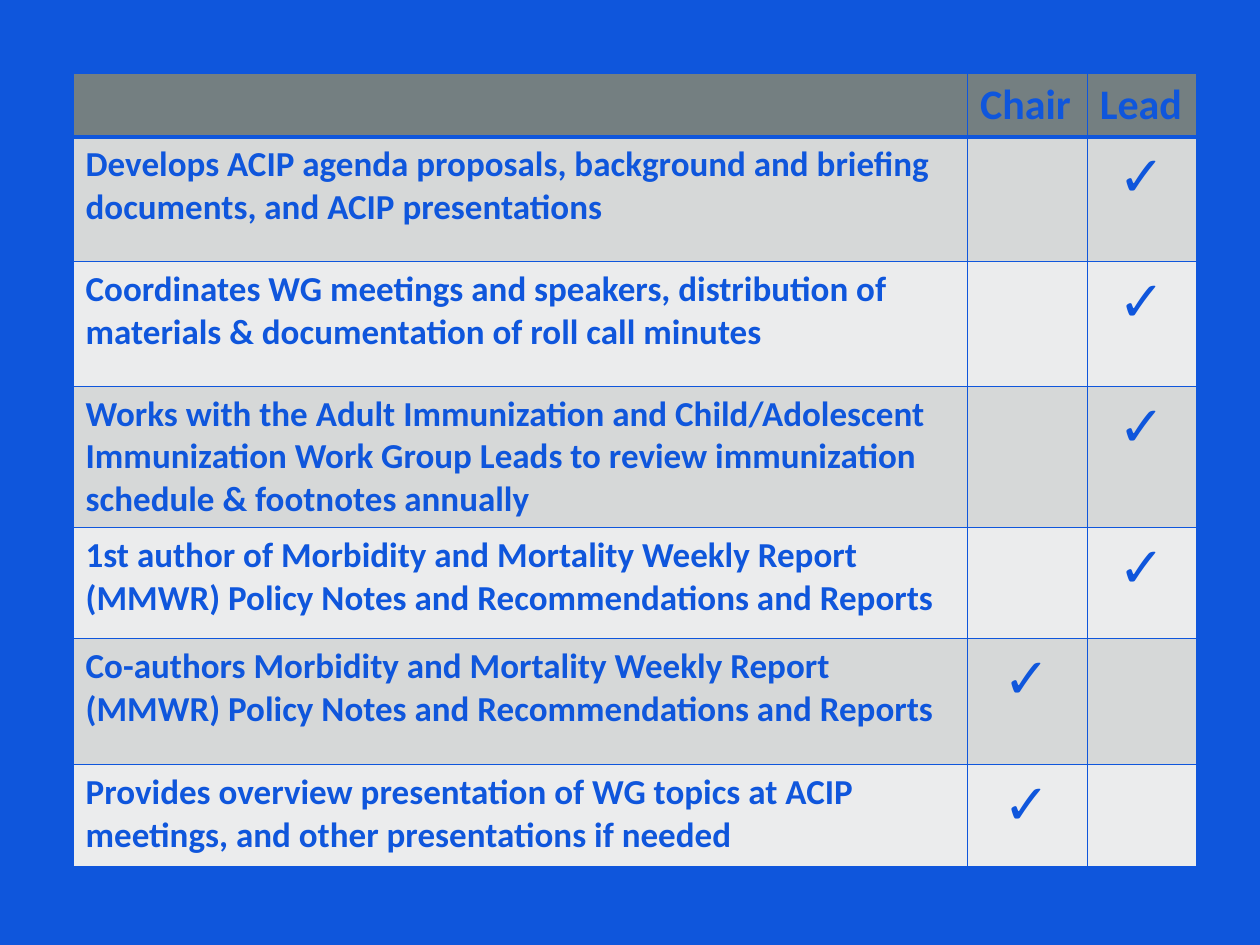
from lxml import etree
from pptx import Presentation
from pptx.dml.color import RGBColor
from pptx.enum.text import PP_ALIGN
from pptx.oxml.ns import qn
from pptx.util import Inches, Pt

LEFT, CENTER = PP_ALIGN.LEFT, PP_ALIGN.CENTER
BLUE, GRAY, BANDS = "0F56DC", "747F81", ("D6D8D8", "EBECED")
FONT, CHECK = "Calibri", "✓"
COLS = (7.1, 0.95, 0.87)
ROWS = (0.5, 0.99, 0.99, 1.07, 0.88, 1, 0.81)
HEADERS = ("", "Chair", "Lead")
DUTIES = (
    ("Develops ACIP agenda proposals, background and briefing documents, "
     "and ACIP presentations", "Lead"),
    ("Coordinates WG meetings and speakers, distribution of materials & "
     "documentation of roll call minutes", "Lead"),
    ("Works with the Adult Immunization and Child/Adolescent Immunization "
     "Work Group Leads to review immunization schedule & footnotes annually",
     "Lead"),
    ("1st author of Morbidity and Mortality Weekly Report (MMWR) Policy "
     "Notes and Recommendations and Reports", "Lead"),
    ("Co-authors Morbidity and Mortality Weekly Report (MMWR) Policy Notes "
     "and Recommendations and Reports", "Chair"),
    ("Provides overview presentation of WG topics at ACIP meetings, and "
     "other presentations if needed", "Chair"),
)


def rgb(value):
    """Turn a hex string into a colour."""
    return RGBColor.from_string(value)


def set_borders(cell, bottom):
    """Draw blue borders round a cell, with the given bottom width."""
    tc_pr = cell._tc.get_or_add_tcPr()
    for side, width in (("L", 1), ("R", 1), ("T", 1), ("B", bottom)):
        ln = etree.SubElement(tc_pr, qn(f"a:ln{side}"), w=str(Pt(width)))
        fill = etree.SubElement(ln, qn("a:solidFill"))
        etree.SubElement(fill, qn("a:srgbClr"), val=BLUE)


def fill_cell(cell, text, size, color, align=LEFT, bottom=1):
    """Style a cell and write its text."""
    set_borders(cell, bottom)
    cell.fill.solid()
    cell.fill.fore_color.rgb = rgb(color)
    if not text:
        return
    p = cell.text_frame.paragraphs[0]
    p.alignment = align
    r = p.add_run()
    r.text = text
    r.font.name, r.font.size, r.font.bold = FONT, Pt(size), True
    r.font.color.rgb = rgb(BLUE)


def add_duties(slide, left, top, width, height):
    """Place the table of duties in the given box."""
    shape = slide.shapes.add_table(len(ROWS), len(COLS), left, top, width, height)
    table = shape.table
    for col, share in zip(table.columns, COLS):
        col.width = int(width * share / sum(COLS))
    for row, share in zip(table.rows, ROWS):
        row.height = int(height * share / sum(ROWS))
    for j, header in enumerate(HEADERS):
        fill_cell(table.cell(0, j), header, 24, GRAY, bottom=3)
    for i, (duty, owner) in enumerate(DUTIES):
        color = BANDS[i % 2]
        fill_cell(table.cell(i + 1, 0), duty, 20, color)
        for j, role in enumerate(HEADERS[1:], 1):
            mark = CHECK if role == owner else ""
            fill_cell(table.cell(i + 1, j), mark, 32, color, CENTER)


def main():
    """Build and save the slide."""
    prs = Presentation()
    prs.slide_width, prs.slide_height = Inches(10), Inches(7.5)
    slide = prs.slides.add_slide(prs.slide_layouts[6])
    slide.background.fill.solid()
    slide.background.fill.fore_color.rgb = rgb(BLUE)
    add_duties(slide, Inches(0.58), Inches(0.58),
               Inches(sum(COLS)), Inches(sum(ROWS)))
    prs.save("out.pptx")


if __name__ == "__main__":
    main()
